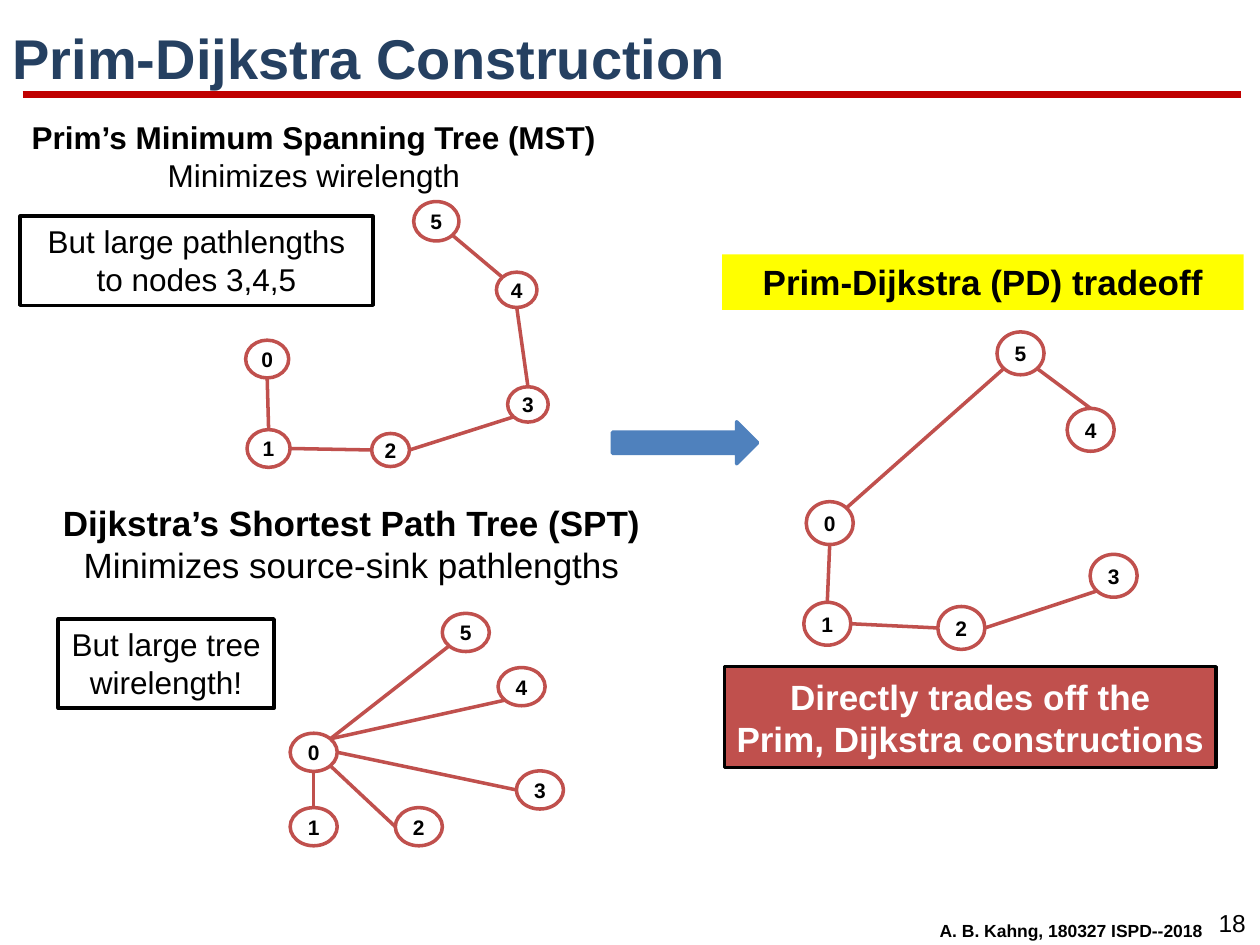
from lxml.etree import SubElement
from pptx import Presentation
from pptx.dml.color import RGBColor
from pptx.enum.shapes import MSO_CONNECTOR, MSO_SHAPE
from pptx.enum.text import MSO_ANCHOR, MSO_AUTO_SIZE, PP_ALIGN
from pptx.oxml.ns import qn
from pptx.util import Pt

FONT = "Arial"
NAVY = RGBColor(0x25, 0x40, 0x61)
DARK = RGBColor(0xC0, 0x00, 0x00)
RED = RGBColor(0xC0, 0x50, 0x4D)
BLUE = RGBColor(0x4F, 0x81, 0xBD)
YELLOW = RGBColor(0xFF, 0xFF, 0x00)
BLACK = RGBColor(0x00, 0x00, 0x00)
WHITE = RGBColor(0xFF, 0xFF, 0xFF)

DIAG = 0.5 ** 0.5
SIDES = {"N": (0, -1), "S": (0, 1), "W": (-1, 0), "E": (1, 0),
         "NW": (-DIAG, -DIAG), "NE": (DIAG, -DIAG),
         "SW": (-DIAG, DIAG), "SE": (DIAG, DIAG)}

# Nodes in order 0 to 5: left, top, width, height
MST_NODES = [(140.4, 194.4, 24.6, 21.6), (141.2, 245.5, 24.6, 21.6),
             (212.4, 247.7, 21.6, 18.9), (290.1, 221, 23.2, 20.2),
             (283.7, 155.5, 23.2, 20.2), (236.4, 115.2, 25.9, 22.5)]
SPT_NODES = [(x, y, 26.9, 21.8) for x, y in
             [(165.8, 419), (165.8, 461.5), (225.9, 461.5),
              (295.1, 440.5), (284.6, 381.5), (252.7, 350.5)]]
PD_NODES = [(x, y, 26.9, 24.5) for x, y in
            [(460.7, 286.7), (459.3, 344.2), (535.9, 346.6),
             (622.9, 316.8), (609.8, 233.4), (569.7, 189.7)]]

# Edges: node, side, node, side
MST_EDGES = [(0, "S", 1, "N"), (1, "E", 2, "W"), (2, "E", 3, "SW"),
             (3, "N", 4, "S"), (4, "NW", 5, "SE")]
SPT_EDGES = [(0, "S", 1, "N"), (0, "SE", 2, "W"), (0, "E", 3, "W"),
             (0, "NE", 4, "SW"), (0, "NE", 5, "SW")]
PD_EDGES = [(0, "S", 1, "N"), (1, "E", 2, "W"), (2, "E", 3, "SW"),
            (0, "NE", 5, "SW"), (5, "SE", 4, "N")]


def write(frame, lines, color=BLACK, align=PP_ALIGN.CENTER):
    """Fill a frame with one paragraph per (text, size, bold)."""
    for i, (text, size, bold) in enumerate(lines):
        para = frame.add_paragraph() if i else frame.paragraphs[0]
        para.alignment = align
        run = para.add_run()
        run.text = text
        font = run.font
        font.name, font.size, font.bold = FONT, Pt(size), bold
        font.color.rgb = color


def add_title(slide, text):
    title = slide.shapes.title
    title.left, title.top, title.width, title.height = map(
        Pt, (0, 11.5, 720, 46.8))
    frame = title.text_frame
    frame.auto_size = MSO_AUTO_SIZE.NONE
    frame.vertical_anchor = MSO_ANCHOR.MIDDLE
    write(frame, [(text, 32, True)], NAVY, PP_ALIGN.LEFT)
    frame.paragraphs[0].line_spacing = 0.9


def add_label(slide, box, lines):
    label = slide.shapes.add_textbox(*map(Pt, box))
    label.text_frame.word_wrap = False
    write(label.text_frame, lines)


def add_shape(shapes, kind, box, fill, line=None, lines=(), color=BLACK,
              wrap=True, anchor=MSO_ANCHOR.MIDDLE):
    shape = shapes.add_shape(kind, *map(Pt, box))
    shape.shadow.inherit = False
    shape.fill.solid()
    shape.fill.fore_color.rgb = fill
    if line is None:
        shape.line.fill.background()
    else:
        shape.line.color.rgb = line
        shape.line.width = Pt(2)
    frame = shape.text_frame
    frame.word_wrap = wrap
    frame.vertical_anchor = anchor
    write(frame, lines, color)


def add_line(shapes, start, end, color, width):
    line = shapes.add_connector(MSO_CONNECTOR.STRAIGHT,
                                *map(Pt, (*start, *end)))
    line.line.color.rgb = color
    line.line.width = Pt(width)
    SubElement(line._element.spPr, qn("a:effectLst"))


def rim(node, side):
    """Return the point on a node's outline at a compass side."""
    x, y, w, h = node
    dx, dy = SIDES[side]
    return x + w / 2 * (1 + dx), y + h / 2 * (1 + dy)


def add_tree(slide, nodes, edges):
    shapes = slide.shapes.add_group_shape().shapes
    for i, node in enumerate(nodes):
        add_shape(shapes, MSO_SHAPE.OVAL, node, WHITE, RED,
                  [(str(i), 12, True)], wrap=False)
    for a, out, b, into in edges:
        add_line(shapes, rim(nodes[a], out), rim(nodes[b], into), RED, 2)


def main():
    deck = Presentation()
    deck.slide_width, deck.slide_height = Pt(720), Pt(540)
    slide = deck.slides.add_slide(deck.slide_layouts[5])
    shapes = slide.shapes
    rect = MSO_SHAPE.RECTANGLE

    add_line(shapes, (13, 54), (709.2, 54), DARK, 4.5)
    add_title(slide, "Prim-Dijkstra Construction")

    add_label(slide, (9.4, 64.1, 339.8, 51),
              [("Prim’s Minimum Spanning Tree (MST)", 18, True),
               ("Minimizes wirelength", 18, False)])
    add_label(slide, (27.4, 283, 347, 55.4),
              [("Dijkstra’s Shortest Path Tree (SPT)", 20, True),
               ("Minimizes source-sink pathlengths", 20, False)])

    add_shape(shapes, rect, (412.6, 145.4, 298, 31.7), YELLOW,
              lines=[("Prim-Dijkstra (PD) tradeoff", 20, True)],
              anchor=MSO_ANCHOR.TOP)
    add_shape(shapes, MSO_SHAPE.RIGHT_ARROW, (350, 241, 83, 24), BLUE, BLUE)
    add_shape(shapes, rect, (414, 381, 281, 57.6), RED, BLACK,
              [("Directly trades off the", 20, True),
               ("Prim, Dijkstra constructions", 20, True)],
              WHITE, wrap=False)
    add_shape(shapes, rect, (11.5, 123.5, 201.6, 51), WHITE, BLACK,
              [("But large pathlengths to nodes 3,4,5", 18, False)],
              anchor=MSO_ANCHOR.TOP)
    add_shape(shapes, rect, (33.3, 353.7, 123.3, 51), WHITE, BLACK,
              [("But large tree", 18, False), ("wirelength!", 18, False)],
              anchor=MSO_ANCHOR.TOP)

    add_tree(slide, MST_NODES, MST_EDGES)
    add_tree(slide, SPT_NODES, SPT_EDGES)
    add_tree(slide, PD_NODES, PD_EDGES)

    add_label(slide, (529.2, 522, 165.6, 19.4),
              [("A. B. Kahng, 180327 ISPD--2018", 10, True)])
    add_label(slide, (688.3, 515.5, 31.7, 24.5), [("18", 14, False)])
    deck.save("out.pptx")


if __name__ == "__main__":
    main()
